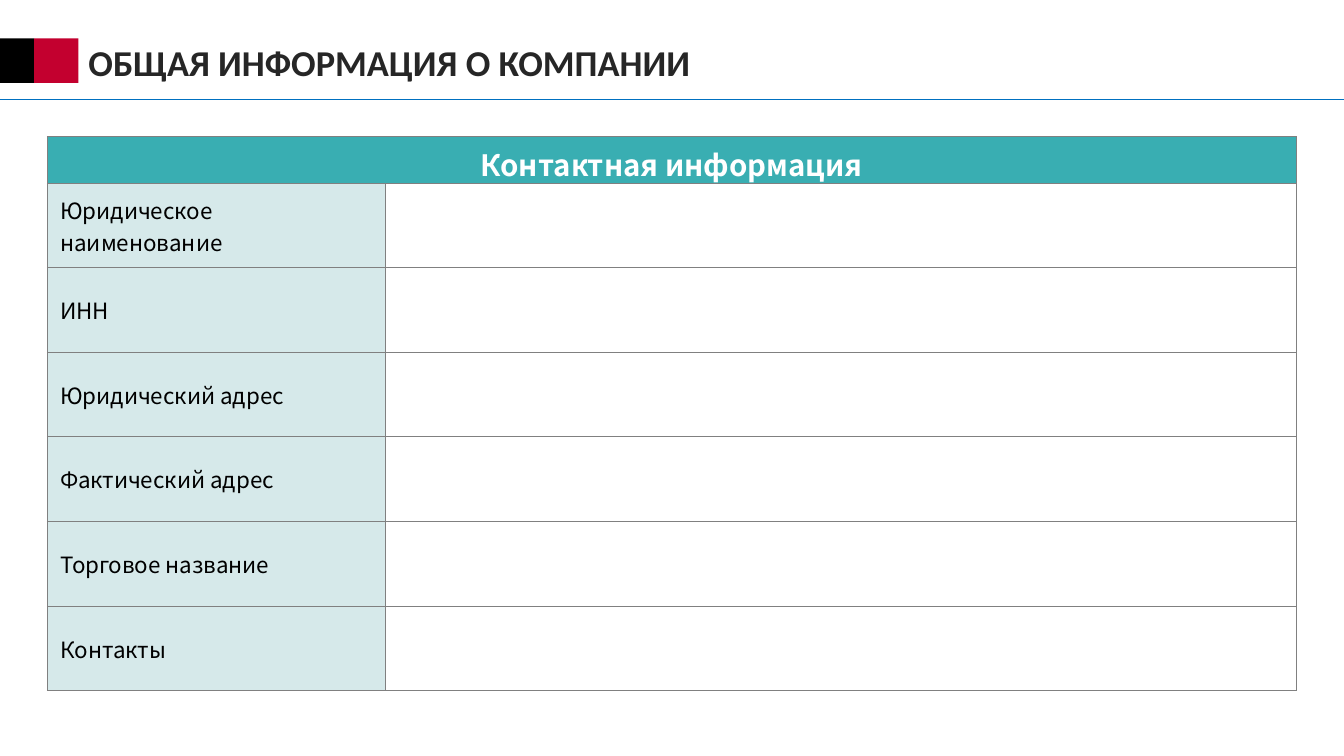
from lxml.etree import SubElement
from pptx import Presentation
from pptx.dml.color import RGBColor
from pptx.enum.shapes import MSO_CONNECTOR as Link, MSO_SHAPE as Form
from pptx.enum.text import MSO_ANCHOR as Anchor, PP_ALIGN as Align
from pptx.oxml.ns import qn
from pptx.util import Cm, Pt

BLACK = RGBColor(0x00, 0x00, 0x00)
WHITE = RGBColor(0xFF, 0xFF, 0xFF)
RED = RGBColor(0xC3, 0x00, 0x2F)
BLUE = RGBColor(0x00, 0x70, 0xC0)
DARK = RGBColor(0x26, 0x26, 0x26)
TEAL = RGBColor(0x39, 0xAE, 0xB2)
PALE = RGBColor(0xD6, 0xE9, 0xEA)
GRAY = RGBColor(0x80, 0x80, 0x80)

HEADER = "Контактная информация"
LABELS = [
    "Юридическое наименование",
    "ИНН",
    "Юридический адрес",
    "Фактический адрес",
    "Торговое название",
    "Контакты",
]


def style(para, face, size, color, bold=False):
    for run in para.runs:
        font = run.font
        font.name = face
        font.size = Pt(size)
        font.bold = bold
        font.color.rgb = color


def add_rule(slide, top, width):
    rule = slide.shapes.add_connector(Link.STRAIGHT, 0, top, width, top)
    rule.line.color.rgb = BLUE
    rule.line.width = Pt(0.5)
    SubElement(rule._element.spPr, qn("a:effectLst"))


def add_block(slide, left, width, color):
    block = slide.shapes.add_shape(Form.RECTANGLE, left, Cm(0.97), width, Cm(1.12))
    block.shadow.inherit = False
    block.fill.solid()
    block.fill.fore_color.rgb = color
    block.line.fill.background()


def add_title(slide, text):
    box = slide.shapes.add_textbox(Cm(1.98), Cm(0.79), Cm(30.94), Cm(1.68))
    frame = box.text_frame
    frame.word_wrap = True
    frame.vertical_anchor = Anchor.MIDDLE
    frame.text = text
    para = frame.paragraphs[0]
    para.line_spacing = 0.9
    style(para, "Calibri", 26, DARK, True)


def set_border(cell):
    props = cell._tc.get_or_add_tcPr()
    for side in ("lnL", "lnR", "lnT", "lnB"):
        line = SubElement(props, qn(f"a:{side}"), w=str(Pt(0.75)))
        fill = SubElement(line, qn("a:solidFill"))
        SubElement(fill, qn("a:srgbClr"), val=str(GRAY))


def set_cell(cell, text, size, color, bold=False):
    cell.text = text
    cell.vertical_anchor = Anchor.MIDDLE
    cell.margin_left = cell.margin_right = Cm(0.33)
    cell.margin_top = cell.margin_bottom = Cm(0.13)
    style(cell.text_frame.paragraphs[0], "Noto Sans CJK SC", size, color, bold)


def set_fill(cell, color):
    cell.fill.solid()
    cell.fill.fore_color.rgb = color


def add_grid(slide):
    shape = slide.shapes.add_table(
        len(LABELS) + 1, 2, Cm(1.19), Cm(3.45), Cm(31.47), Cm(13.95)
    )
    table = shape.table
    table.horz_banding = False
    table.columns[0].width = Cm(8.53)
    table.columns[1].width = Cm(22.94)
    for row in table.rows:
        row.height = Cm(2.13)
        for cell in row.cells:
            set_border(cell)
            cell.fill.background()
    table.rows[0].height = Cm(1.17)

    head = table.cell(0, 0)
    head.merge(table.cell(0, 1))
    set_cell(head, HEADER, 21, WHITE, True)
    set_fill(head, TEAL)
    head.text_frame.paragraphs[0].alignment = Align.CENTER
    for row, label in enumerate(LABELS, 1):
        cell = table.cell(row, 0)
        set_cell(cell, label, 16, BLACK)
        set_fill(cell, PALE)


def main():
    deck = Presentation()
    deck.slide_width = Cm(33.87)
    deck.slide_height = Cm(19.05)
    slide = deck.slides.add_slide(deck.slide_layouts[6])
    add_rule(slide, Cm(2.51), deck.slide_width)
    add_block(slide, 0, Cm(0.86), BLACK)
    add_block(slide, Cm(0.86), Cm(1.12), RED)
    add_title(slide, "ОБЩАЯ ИНФОРМАЦИЯ О КОМПАНИИ")
    add_grid(slide)
    deck.save("out.pptx")


if __name__ == "__main__":
    main()
